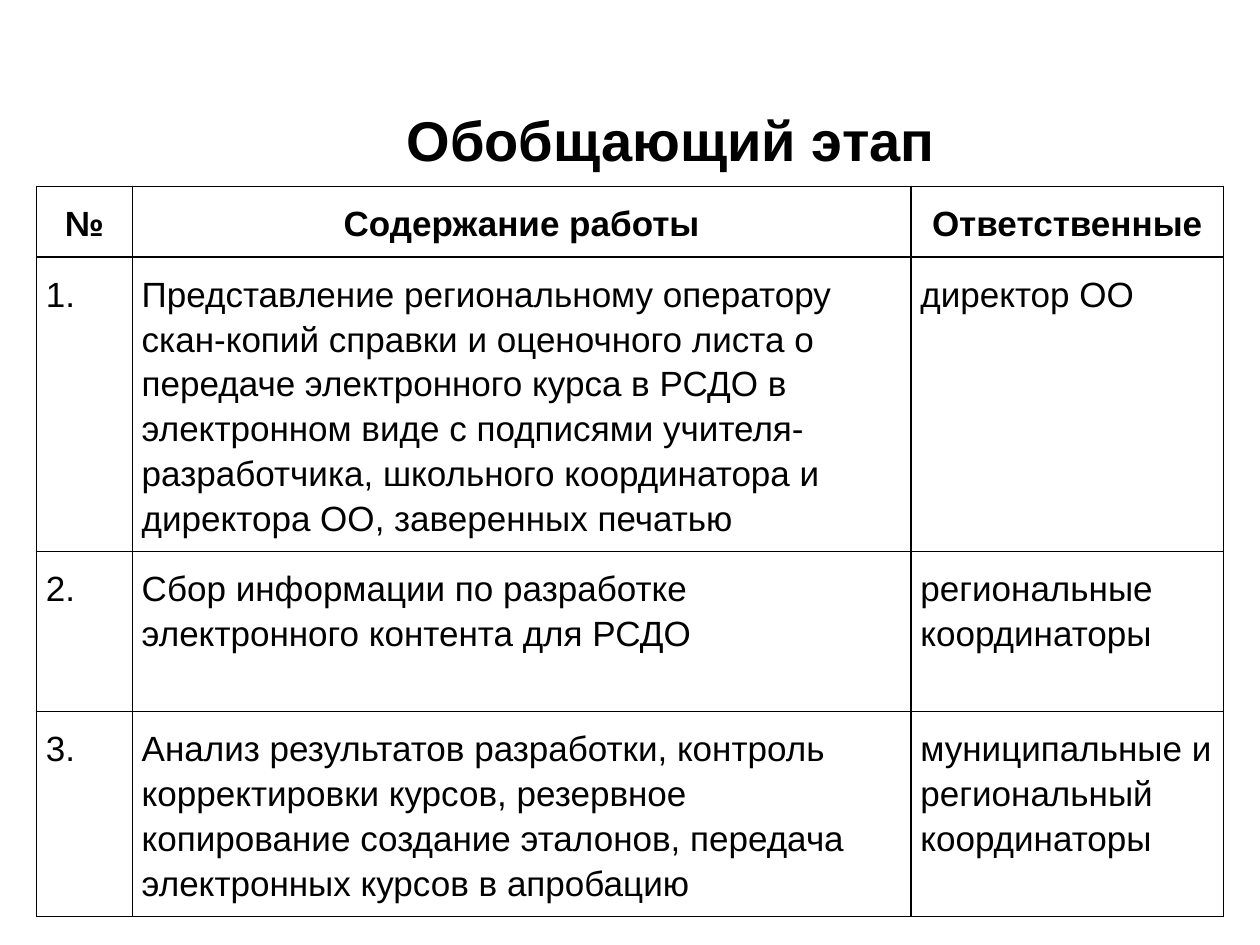
from lxml import etree
from pptx import Presentation, util as u
from pptx.dml.color import RGBColor
from pptx.enum import text
from pptx.oxml.ns import qn

BLACK = RGBColor(0x00, 0x00, 0x00)
LEFT, CENTER, JUSTIFY = text.PP_ALIGN.LEFT, text.PP_ALIGN.CENTER, text.PP_ALIGN.JUSTIFY

HEADINGS = ("№", "Содержание работы", "Ответственные")
STEPS = (
    ("1.",
     "Представление региональному оператору скан-копий справки и оценочного листа "
     "о передаче электронного курса в РСДО в электронном виде с подписями учителя- "
     "разработчика, школьного координатора и директора ОО, заверенных печатью",
     "директор ОО"),
    ("2.",
     "Сбор информации по разработке электронного контента для РСДО",
     "региональные координаторы"),
    ("3.",
     "Анализ результатов разработки, контроль корректировки курсов, резервное "
     "копирование создание эталонов, передача электронных курсов в апробацию",
     "муниципальные и региональный координаторы"),
)


class SlideBuilder:
    """Style and current slide; lengths are cells of a 100 by 75 grid."""
    FONT = "Arial"
    SPACING = 1.15
    COLUMNS, ROWS = 100, 75

    def __init__(self):
        self.deck = Presentation()
        self.deck.slide_width, self.deck.slide_height = u.Inches(10), u.Inches(7.5)
        self.slide = self.deck.slides.add_slide(self.deck.slide_layouts[5])

    def across(self, columns):
        return u.Emu(round(self.deck.slide_width * columns / self.COLUMNS))

    def down(self, rows):
        return u.Emu(round(self.deck.slide_height * rows / self.ROWS))

    def style(self, paragraph, size, bold, align):
        paragraph.alignment = align
        paragraph.line_spacing = self.SPACING
        font = paragraph.font
        font.name, font.size, font.bold = self.FONT, u.Pt(size), bold
        font.color.rgb = BLACK

    def title(self, wording, left, top, width, height, indent):
        heading = self.slide.shapes.title
        heading.left, heading.top = self.across(left), self.down(top)
        heading.width, heading.height = self.across(width), self.down(height)
        frame = heading.text_frame
        frame.text = wording
        frame.auto_size = text.MSO_AUTO_SIZE.NONE
        frame.vertical_anchor = text.MSO_ANCHOR.MIDDLE
        line = frame.paragraphs[0]
        line._p.get_or_add_pPr().set("indent", str(self.across(indent)))
        self.style(line, 32, True, CENTER)

    def borders(self, cell):
        properties = cell._tc.get_or_add_tcPr()
        for side in ("lnL", "lnR", "lnT", "lnB"):
            edge = etree.SubElement(properties, qn(f"a:{side}"), w=str(u.Pt(1)))
            fill = etree.SubElement(edge, qn("a:solidFill"))
            etree.SubElement(fill, qn("a:srgbClr"), val=str(BLACK))

    def cell(self, cell, wording, bold, align):
        cell.margin_left = cell.margin_right = self.across(0.75)
        cell.margin_top = cell.margin_bottom = self.down(1)
        self.borders(cell)
        cell.fill.background()
        cell.text = wording
        self.style(cell.text_frame.paragraphs[0], 20, bold, align)

    def table(self, headings, records, left, top, widths, heights):
        table = self.slide.shapes.add_table(
            len(heights), len(widths), self.across(left), self.down(top),
            self.across(sum(widths)), self.down(sum(heights))).table
        table.first_row = table.horz_banding = False
        for column, width in zip(table.columns, widths):
            column.width = self.across(width)
        for row, height in zip(table.rows, heights):
            row.height = self.down(height)
        for r, record in enumerate((headings, *records)):
            aligns = (JUSTIFY, LEFT, LEFT) if r else (CENTER,) * len(widths)
            for c, (wording, align) in enumerate(zip(record, aligns)):
                self.cell(table.cell(r, c), wording, r == 0, align)


def main():
    builder = SlideBuilder()
    # Heading
    builder.title("Обобщающий этап", 24.8, 7.7, 53, 5.9, indent=3.9)
    # Steps of the stage and who answers for them
    builder.table(HEADINGS, STEPS, 2.9, 14.8,
                  widths=(7.6, 61.8, 24.8), heights=(5.6, 23.3, 12.7, 16.2))
    builder.deck.save("out.pptx")


if __name__ == "__main__":
    main()
